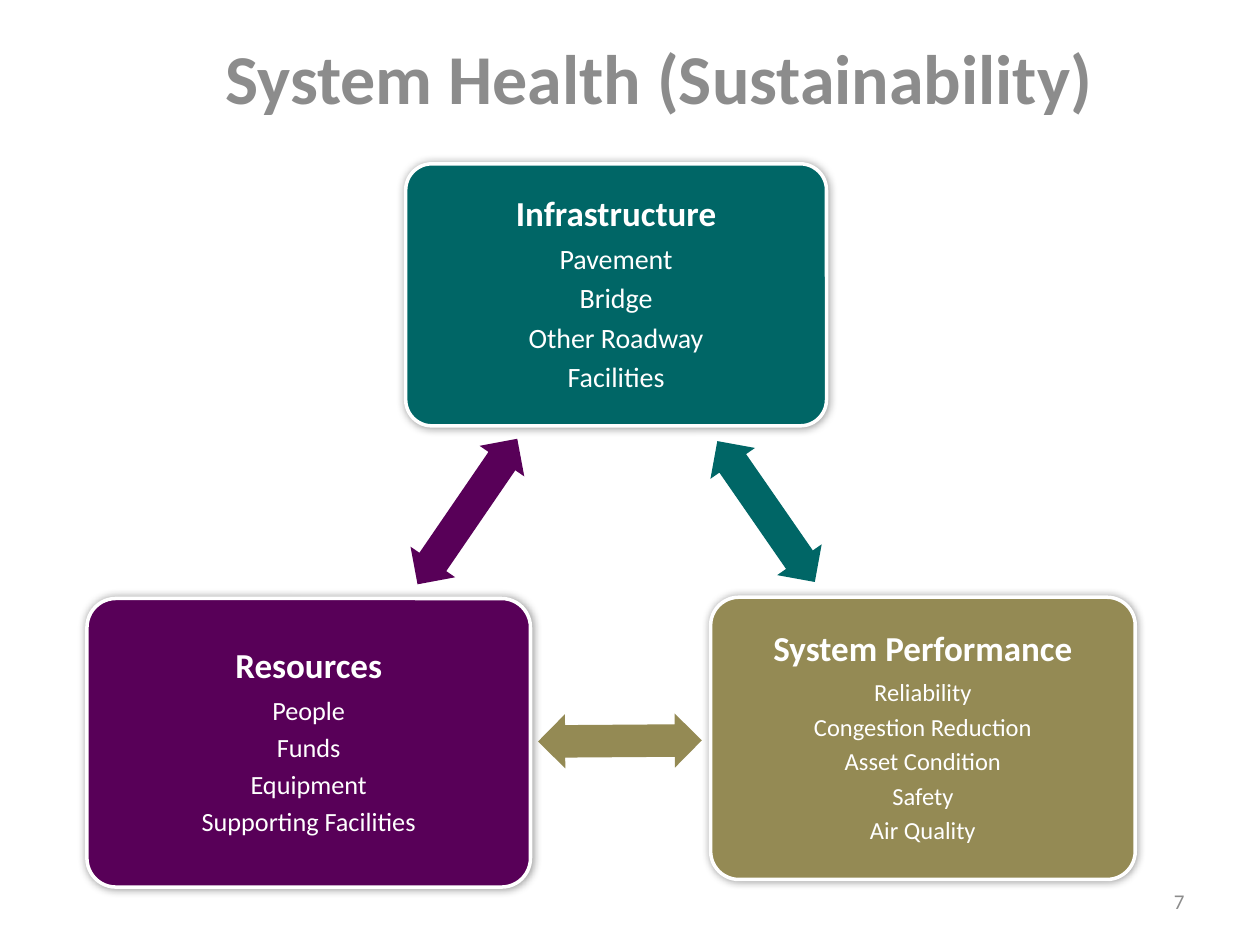
import dataclasses

import lxml.etree
import pptx
import pptx.dml.color
import pptx.enum.shapes
import pptx.enum.text
import pptx.oxml.ns
import pptx.util

ALIGN = pptx.enum.text.PP_ALIGN
ANCHOR = pptx.enum.text.MSO_ANCHOR
SHAPE = pptx.enum.shapes.MSO_SHAPE
COLUMNS, ROWS = 100, 75
CELL = pptx.util.Inches(0.1)


@dataclasses.dataclass(frozen=True)
class Theme:
    font: str = "Calibri"
    grey: str = "8C8C8C"
    white: str = "FFFFFF"
    shadow: str = "000000"
    teal: str = "006666"
    olive: str = "948A54"
    purple: str = "580058"
    title_size: int = 40
    heading_size: int = 20
    number_size: int = 12


THEME = Theme()


def cells(*values):
    """Convert counts of grid cells to lengths."""
    return [round(value * CELL) for value in values]


def rgb(color):
    return pptx.dml.color.RGBColor.from_string(color)


def format_paragraph(p, size, color, bold=False, align=ALIGN.CENTER):
    p.alignment = align
    for r in p.runs:
        r.font.name = THEME.font
        r.font.size = pptx.util.Pt(size)
        r.font.bold = bold
        r.font.color.rgb = rgb(color)


def set_title(s, text, box, indent):
    sp = s.shapes.title
    sp.left, sp.top, sp.width, sp.height = cells(*box)
    tf = sp.text_frame
    tf.text = text
    tf.auto_size = pptx.enum.text.MSO_AUTO_SIZE.NONE
    tf.vertical_anchor = ANCHOR.TOP
    p = tf.paragraphs[0]
    p._p.get_or_add_pPr().set("marL", str(cells(indent)[0]))
    format_paragraph(p, THEME.title_size, THEME.grey, bold=True)


def add_glow_shadow(sp):
    """Give the shape an even, soft shadow on all sides."""
    sp.shadow.inherit = False
    qn = pptx.oxml.ns.qn
    effects = sp._element.spPr.find(qn("a:effectLst"))
    shadow = lxml.etree.SubElement(
        effects, qn("a:outerShdw"), blurRad=str(pptx.util.Pt(5)),
        dist="0", dir="0", rotWithShape="0")
    color = lxml.etree.SubElement(shadow, qn("a:srgbClr"), val=THEME.shadow)
    lxml.etree.SubElement(color, qn("a:alpha"), val="40000")


def add_card(s, box, color, heading, items, item_size):
    sp = s.shapes.add_shape(SHAPE.ROUNDED_RECTANGLE, *cells(*box))
    sp.adjustments[0] = 0.1
    sp.fill.solid()
    sp.fill.fore_color.rgb = rgb(color)
    sp.line.color.rgb = rgb(THEME.white)
    sp.line.width = pptx.util.Pt(2)
    add_glow_shadow(sp)

    tf = sp.text_frame
    tf.word_wrap = True
    tf.vertical_anchor = ANCHOR.MIDDLE
    tf.margin_left = tf.margin_right = pptx.util.Inches(0.08)
    tf.margin_top = tf.margin_bottom = pptx.util.Inches(0.08)
    tf.text = "\n".join([heading, *items])
    for i, p in enumerate(tf.paragraphs):
        size = item_size if i else THEME.heading_size
        format_paragraph(p, size, THEME.white, bold=i == 0)
        p.line_spacing = 0.9
        p.space_after = pptx.util.Pt(round(0.33 * size, 1))


def add_double_arrow(s, center, length, angle, color):
    thickness = 4.3
    x, y = center
    sp = s.shapes.add_shape(
        SHAPE.LEFT_RIGHT_ARROW,
        *cells(x - length / 2, y - thickness / 2, length, thickness))
    sp.adjustments[0], sp.adjustments[1] = 0.6, 0.5
    sp.rotation = angle
    sp.fill.solid()
    sp.fill.fore_color.rgb = rgb(color)
    sp.line.fill.background()
    sp.shadow.inherit = False


def add_page_number(s, number, box):
    tf = s.shapes.add_textbox(*cells(*box)).text_frame
    tf.word_wrap = True
    tf.vertical_anchor = ANCHOR.MIDDLE
    tf.text = number
    format_paragraph(tf.paragraphs[0], THEME.number_size, THEME.grey,
                     align=ALIGN.RIGHT)


def main():
    prs = pptx.Presentation()
    prs.slide_width, prs.slide_height = cells(COLUMNS, ROWS)
    s = prs.slides.add_slide(prs.slide_layouts[5])

    set_title(s, "System Health (Sustainability)", (6.9, 2.2, 86.1, 17.2), 4.7)

    add_card(s, (32.2, 13, 33.4, 20.8), THEME.teal, "Infrastructure",
             ["Pavement", "Bridge", "Other Roadway", "Facilities"], 16)
    add_double_arrow(s, (60.8, 40.6), 13.6, 55.3, THEME.teal)

    add_card(s, (56.4, 47.4, 33.7, 22.4), THEME.olive, "System Performance",
             ["Reliability", "Congestion Reduction", "Asset Condition",
              "Safety", "Air Quality"], 14)
    add_double_arrow(s, (49.2, 58.8), 13, 179.6, THEME.olive)

    add_card(s, (6.9, 47.5, 35.2, 22.9), THEME.purple, "Resources",
             ["People", "Funds", "Equipment", "Supporting Facilities"], 15)
    add_double_arrow(s, (37.1, 40.6), 14, 304.4, THEME.purple)

    add_page_number(s, "7", (71.7, 69.5, 23.3, 4))
    prs.save("out.pptx")


if __name__ == "__main__":
    main()
